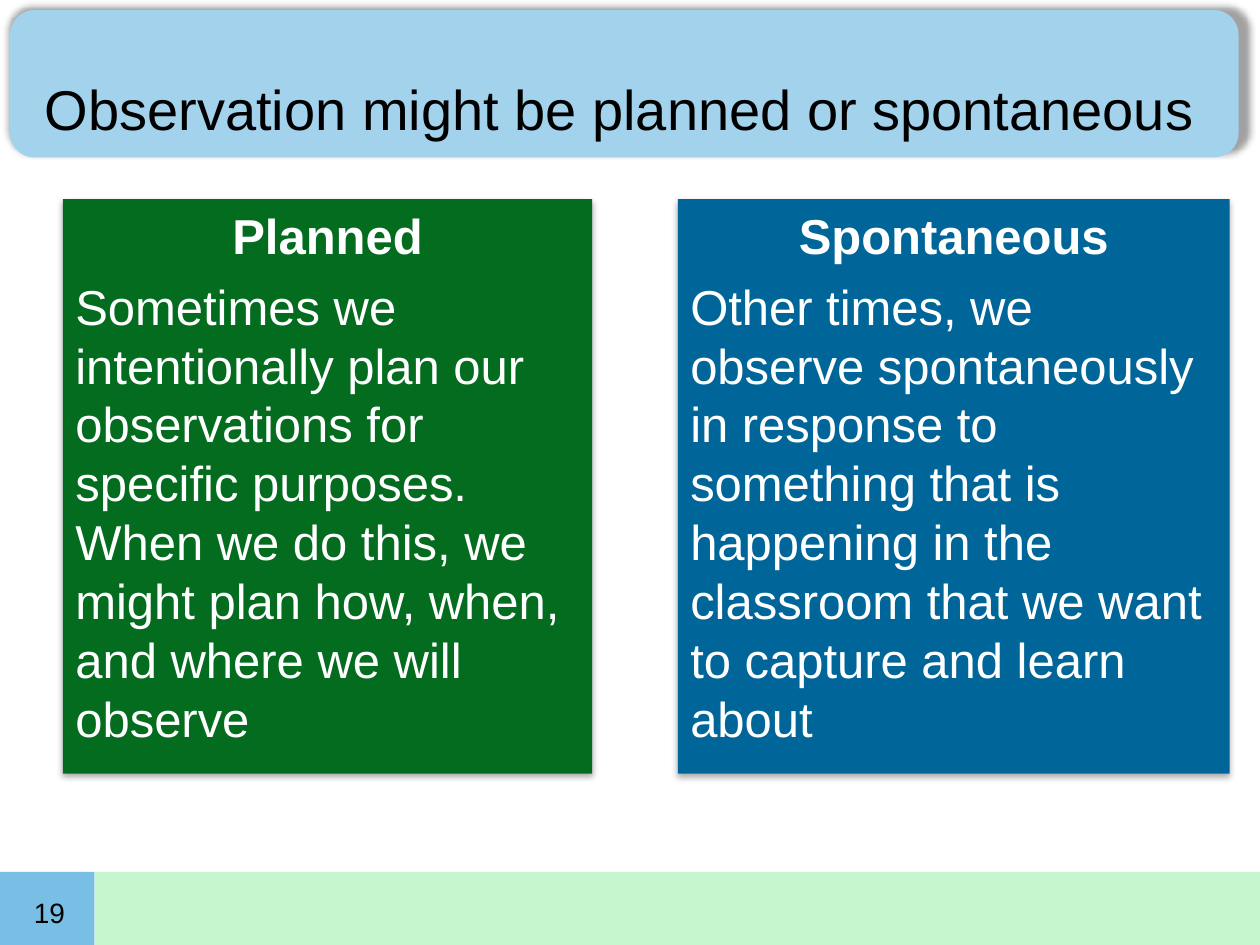
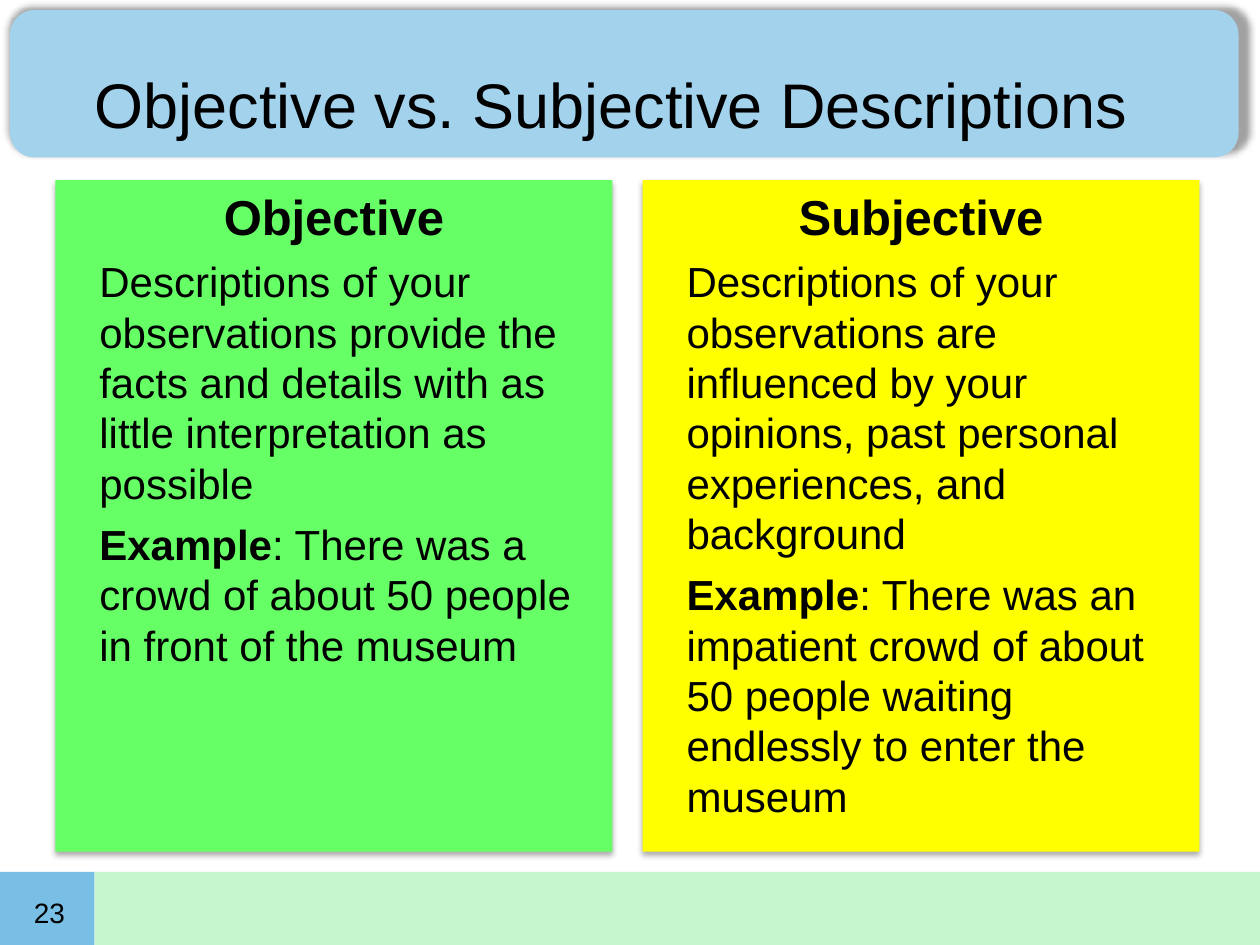
from lxml import etree
from pptx import Presentation
from pptx import util as u
from pptx.dml.color import RGBColor
from pptx.enum import shapes, text
from pptx.oxml.ns import qn

WIDTH, HEIGHT = u.Inches(10), u.Inches(7.5)
FONT = "Arial"
BLACK = RGBColor(0x00, 0x00, 0x00)
WHITE = RGBColor(0xFF, 0xFF, 0xFF)
BANNER_BLUE = RGBColor(0xA2, 0xD2, 0xEC)
FOOTER_BLUE = RGBColor(0x79, 0xBE, 0xE5)
FOOTER_GREEN = RGBColor(0xC6, 0xF6, 0xCD)
DARK_GREEN = RGBColor(0x04, 0x6C, 0x1F)
DARK_BLUE = RGBColor(0x00, 0x66, 0x99)
LIGHT_GREEN = RGBColor(0x66, 0xFF, 0x66)
YELLOW = RGBColor(0xFF, 0xFF, 0x00)

BANNER = (0.08, 0.08, 9.75, 1.17)
TITLE = (0.17, -0.08, 9.5, 1.25)
FOOTER_TOP, FOOTER_HEIGHT, FOOTER_SPLIT = 6.92, 0.58, 0.75
BANNER_SHADOW = dict(alpha=37, blur=4, dist=3, angle=250, sx=101000, algn="bl")
PANEL_SHADOW = dict(alpha=32, blur=3.5, dist=2.2, angle=90)


def inches(box):
    return [u.Inches(length) for length in box]


def add_shadow(shape, alpha, blur, dist, angle, **extra):
    effects = shape._element.spPr.find(qn("a:effectLst"))
    shadow = etree.SubElement(effects, qn("a:outerShdw"))
    settings = dict(blurRad=u.Pt(blur), dist=u.Pt(dist), dir=angle * 60000,
                    rotWithShape=0, **extra)
    for key, value in settings.items():
        shadow.set(key, str(value))
    color = etree.SubElement(shadow, qn("a:srgbClr"), val=str(BLACK))
    etree.SubElement(color, qn("a:alpha"), val=str(alpha * 1000))


def add_block(slide, box, fill, kind=shapes.MSO_SHAPE.RECTANGLE, shadow=None):
    block = slide.shapes.add_shape(kind, *inches(box))
    block.fill.solid()
    block.fill.fore_color.rgb = fill
    block.line.fill.background()
    block.shadow.inherit = False
    if shadow:
        add_shadow(block, **shadow)
    return block


def style(paragraph, size, color=BLACK, bold=None, align=text.PP_ALIGN.LEFT):
    font = paragraph.font
    font.name, font.size, font.bold = FONT, u.Pt(size), bold
    font.color.rgb = color
    paragraph.alignment = align


def add_label(slide, box, words, size, align):
    frame = slide.shapes.add_textbox(*inches(box)).text_frame
    frame.word_wrap = True
    frame.vertical_anchor = text.MSO_ANCHOR.BOTTOM
    frame.text = words
    style(frame.paragraphs[0], size, align=align)


def add_frame(slide, title, title_size, number):
    add_block(slide, (FOOTER_SPLIT, FOOTER_TOP, 10 - FOOTER_SPLIT, FOOTER_HEIGHT), FOOTER_GREEN)
    add_block(slide, (0, FOOTER_TOP, FOOTER_SPLIT, FOOTER_HEIGHT), FOOTER_BLUE)
    add_block(slide, BANNER, BANNER_BLUE, shapes.MSO_SHAPE.ROUNDED_RECTANGLE, BANNER_SHADOW)
    add_label(slide, (0.17, FOOTER_TOP, 0.58, 0.5), number, 16, text.PP_ALIGN.LEFT)
    add_label(slide, TITLE, title, title_size, text.PP_ALIGN.CENTER)


def add_panel(slide, box, fill, color, heading, body, size, indent=0):
    frame = add_block(slide, box, fill, shadow=PANEL_SHADOW).text_frame
    frame.word_wrap = True
    frame.vertical_anchor = text.MSO_ANCHOR.TOP
    head = frame.paragraphs[0]
    head.text = heading
    style(head, 28, color, True, text.PP_ALIGN.CENTER)
    for lead, words in body:
        paragraph = frame.add_paragraph()
        style(paragraph, size, color)
        paragraph._p.get_or_add_pPr().set("marL", str(u.Inches(indent)))
        if lead:
            run = paragraph.add_run()
            run.text = lead
            run.font.bold = True
        paragraph.add_run().text = words
    for paragraph in frame.paragraphs:
        paragraph.space_before = u.Pt(paragraph.font.size.pt / 4)


def add_comparison(deck, title, title_size, number, top, height, panels, size, indent=0):
    slide = deck.slides.add_slide(deck.slide_layouts[6])
    add_frame(slide, title, title_size, number)
    for left, width, fill, color, heading, body in panels:
        add_panel(slide, (left, top, width, height), fill, color, heading, body, size, indent)


def main():
    deck = Presentation()
    deck.slide_width, deck.slide_height = WIDTH, HEIGHT
    add_comparison(
        deck, "Observation might be planned or spontaneous", 32, "19", 1.58, 4.56,
        [(0.5, 4.2, DARK_GREEN, WHITE, "Planned",
          [("", "Sometimes we intentionally plan our observations for specific purposes. "
                "When we do this, we might plan how, when, and where we will observe")]),
         (5.38, 4.38, DARK_BLUE, WHITE, "Spontaneous",
          [("", "Other times, we observe spontaneously in response to something that is "
                "happening in the classroom that we want to capture and learn about")])],
        size=28)
    add_comparison(
        deck, "Objective vs. Subjective Descriptions ", 36, "23", 1.43, 5.33,
        [(0.44, 4.42, LIGHT_GREEN, BLACK, "Objective",
          [("", "Descriptions of your observations provide the facts and details "
                "with as little interpretation as possible"),
           ("Example", ": There was a crowd of about 50 people in front of the museum")]),
         (5.1, 4.42, YELLOW, BLACK, "Subjective",
          [("", "Descriptions of your observations are influenced by your opinions, "
                "past personal experiences, and background"),
           ("Example", ": There was an impatient crowd of about 50 people waiting "
                       "endlessly to enter the museum")])],
        size=24, indent=0.25)
    deck.save("out.pptx")


if __name__ == "__main__":
    main()
